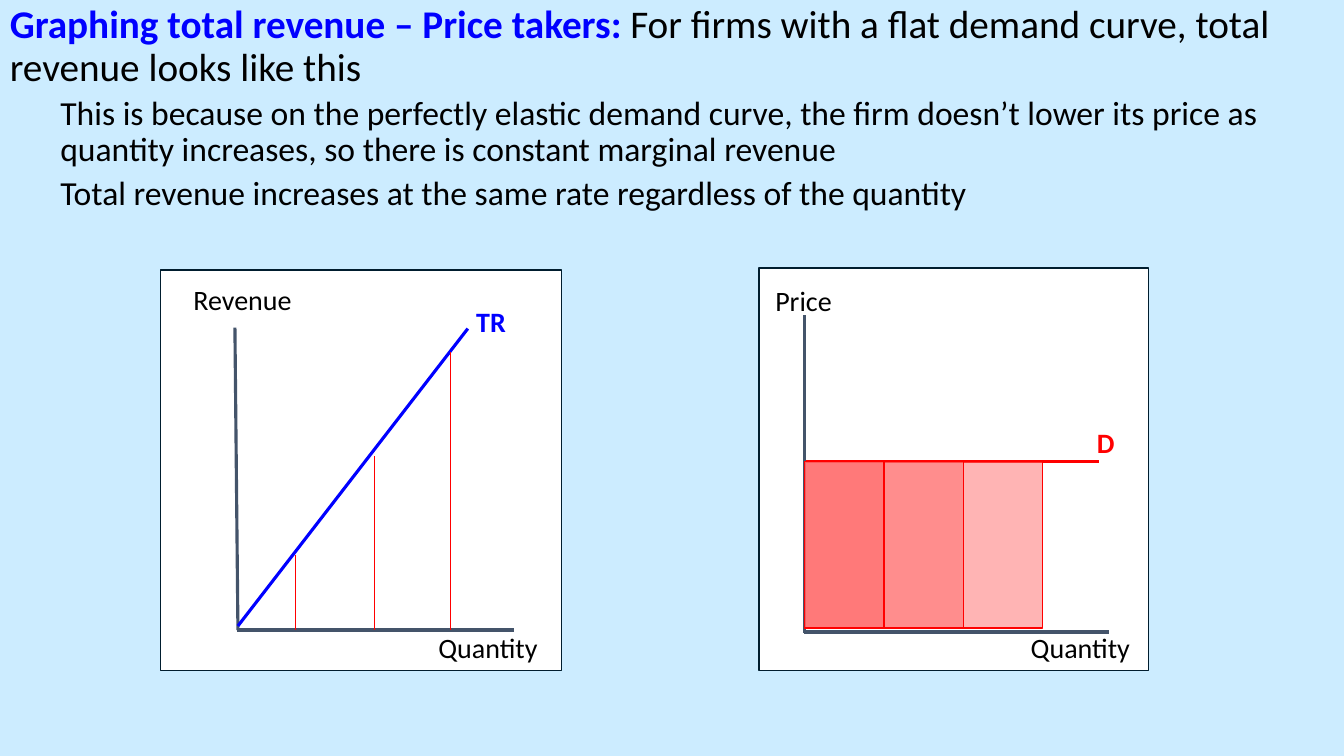
import pptx
import pptx.util
import pptx.dml.color
import pptx.enum.shapes
import pptx.enum.text
import pptx.oxml
import pptx.oxml.ns
from dataclasses import dataclass


@dataclass(frozen=True)
class Theme:
    font: str = "Calibri"
    background: str = "CCECFF"
    panel: str = "FFFFFF"
    border: str = "001D2E"
    axis: str = "44546A"
    text: str = "000000"
    blue: str = "0000FF"
    red: str = "FF0000"
    area: str = "FF6666"
    area_alpha: int = 49
    title_size: int = 28
    body_size: int = 24
    label_size: int = 20
    curve_width: float = 2.25
    drop_width: float = 0.5
    border_width: float = 1


THEME = Theme()
WIDTH, HEIGHT = 133.3, 75  # grid of tenth-inch cells


def cells(n):
    return pptx.util.Inches(n / 10)


def rgb(value):
    return pptx.dml.color.RGBColor.from_string(value)


def add_box(s, box, fill, line, alpha=None):
    sp = s.shapes.add_shape(pptx.enum.shapes.MSO_SHAPE.RECTANGLE, *map(cells, box))
    sp.shadow.inherit = False
    sp.fill.solid()
    sp.fill.fore_color.rgb = rgb(fill)
    sp.line.color.rgb = rgb(line)
    sp.line.width = pptx.util.Pt(THEME.border_width)
    if alpha is not None:
        color = sp.fill._xPr.find(".//" + pptx.oxml.ns.qn("a:srgbClr"))
        node = pptx.oxml.parse_xml(
            f'<a:alpha {pptx.oxml.ns.nsdecls("a")} val="{alpha * 1000}"/>')
        color.append(node)


def add_line(s, box, start, end, color, width):
    """Draw a line whose ends are measured from the box corner."""
    x, y = box[:2]
    ends = (x + start[0], y + start[1], x + end[0], y + end[1])
    line = s.shapes.add_connector(
        pptx.enum.shapes.MSO_CONNECTOR.STRAIGHT, *map(cells, ends))
    line.line.color.rgb = rgb(color)
    line.line.width = pptx.util.Pt(width)
    line._element.spPr.append(
        pptx.oxml.parse_xml(f'<a:effectLst {pptx.oxml.ns.nsdecls("a")}/>'))


def add_label(s, box, place, text, color=THEME.text, bold=False, centred=True):
    """Place text in an area (left, top, width) measured from the box corner."""
    left, top, width = place
    sp = s.shapes.add_textbox(
        *map(cells, (box[0] + left, box[1] + top, width, 4.4)))
    tf = sp.text_frame
    tf.word_wrap = True
    p = tf.paragraphs[0]
    p.text = text
    p.font.name, p.font.size = THEME.font, pptx.util.Pt(THEME.label_size)
    p.font.bold, p.font.color.rgb = bold, rgb(color)
    align = pptx.enum.text.PP_ALIGN
    p.alignment = align.CENTER if centred else align.LEFT


def add_explanation(s, box):
    tf = s.shapes.add_textbox(*map(cells, box)).text_frame
    tf.word_wrap = True
    rows = [
        (THEME.title_size, 10, 0, [
            ("Graphing total revenue – Price takers:", THEME.blue, True),
            (" For firms with a flat demand curve, total revenue looks like this",
             THEME.text, False)]),
        (THEME.body_size, 5, 5, [
            ("This is because on the perfectly elastic demand curve, the firm "
             "doesn’t lower its price as quantity increases, so there is "
             "constant marginal revenue", THEME.text, False)]),
        (THEME.body_size, 5, 5, [
            ("Total revenue increases at the same rate regardless of the quantity",
             THEME.text, False)]),
    ]
    for i, (size, before, indent, runs) in enumerate(rows):
        p = tf.add_paragraph() if i else tf.paragraphs[0]
        p.font.name, p.font.size = THEME.font, pptx.util.Pt(size)
        p.line_spacing, p.space_before = 0.9, pptx.util.Pt(before)
        p._p.get_or_add_pPr().set("marL", str(cells(indent)))
        for text, color, bold in runs:
            r = p.add_run()
            r.text = text
            r.font.bold, r.font.color.rgb = bold, rgb(color)


def add_revenue_graph(s, box):
    add_box(s, box, THEME.panel, THEME.border)
    for start, end, color in [((7.4, 5.7), (7.7, 35.7), THEME.axis),
                              ((7.6, 35.7), (35.1, 35.7), THEME.axis),
                              ((7.7, 35.3), (30.5, 5.8), THEME.blue)]:
        add_line(s, box, start, end, color, THEME.curve_width)
    for x, top in [(13.4, 28.3), (21.2, 18.4), (28.8, 8.1)]:
        add_line(s, box, (x, 35.7), (x, top), THEME.red, THEME.drop_width)
    add_label(s, box, (26.3, 35.3, 12.4), "Quantity")
    add_label(s, box, (2.2, 0.7, 11.9), "Revenue")
    add_label(s, box, (27.5, 2.9, 10.6), "TR", THEME.blue, True)


def add_demand_graph(s, box):
    add_box(s, box, THEME.panel, THEME.border)
    price, unit = 19.2, 7.87
    for start, end, color in [((4.5, 4.7), (4.5, 36.2), THEME.axis),
                              ((4.4, 36.1), (34.7, 36.1), THEME.axis),
                              ((4.6, price), (33.7, price), THEME.red)]:
        add_line(s, box, start, end, color, THEME.curve_width)
    add_label(s, box, (32.5, 15.1, 9.6), "D", THEME.red, True, False)
    add_label(s, box, (25.1, 35.5, 13.5), "Quantity")
    add_label(s, box, (0, 1, 8.8), "Price")
    for quantity in (3, 2, 1):
        area = (box[0] + 4.5, box[1] + price, quantity * unit, 16.5)
        add_box(s, area, THEME.area, THEME.red, THEME.area_alpha)


def main():
    prs = pptx.Presentation()
    prs.slide_width, prs.slide_height = cells(WIDTH), cells(HEIGHT)
    s = prs.slides.add_slide(prs.slide_layouts[6])
    s.background.fill.solid()
    s.background.fill.fore_color.rgb = rgb(THEME.background)
    add_explanation(s, (0, 0, WIDTH, 35.6))
    add_demand_graph(s, (75.3, 26.6, 38.6, 39.9))
    add_revenue_graph(s, (15.9, 26.8, 39.8, 39.7))
    prs.save("out.pptx")


if __name__ == "__main__":
    main()
